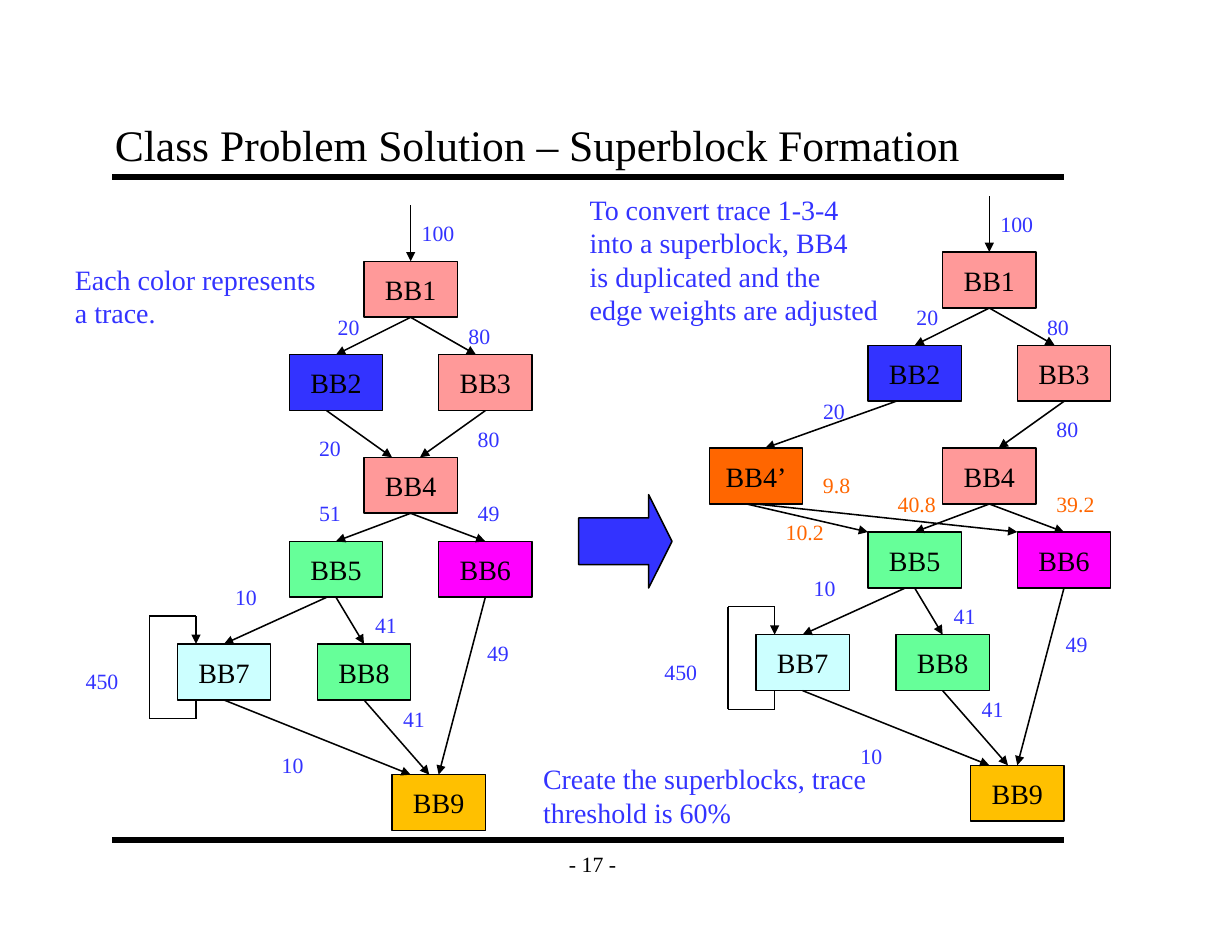
from typing import NamedTuple

from lxml.etree import SubElement
from pptx import Presentation
from pptx.dml.color import RGBColor
from pptx.enum.shapes import MSO_CONNECTOR, MSO_SHAPE
from pptx.enum.text import MSO_ANCHOR, PP_ALIGN
from pptx.oxml.ns import qn
from pptx.util import Cm, Pt

FONT = "Times New Roman"
BLACK, BLUE, ORANGE = "000000", "3333FF", "FF6600"
PINK, GREEN, MAGENTA, CYAN, GOLD = "FF9999", "66FF99", "FF00FF", "CCFFFF", "FFC000"
BOX_WIDTH, BOX_HEIGHT = 10, 6


class Block(NamedTuple):
    name: str
    left: float
    top: float
    fill: str


class Edge(NamedTuple):
    x1: float
    y1: float
    x2: float
    y2: float
    arrow: bool = True


class Weight(NamedTuple):
    value: str
    left: float
    top: float
    color: str = BLUE


class Note(NamedTuple):
    lines: list[str]
    left: float
    top: float
    width: float
    height: float


# Positions are in grid steps of a twelfth of an inch.
# Parts shared by both flow graphs, placed for the left one
BLOCKS = [
    Block("BB1", 39, 28, PINK), Block("BB2", 31, 38, BLUE), Block("BB3", 47, 38, PINK),
    Block("BB4", 39, 49, PINK), Block("BB5", 31, 58, GREEN), Block("BB6", 47, 58, MAGENTA),
    Block("BB7", 19, 69, CYAN), Block("BB8", 34, 69, GREEN), Block("BB9", 42, 83, GOLD),
]
EDGES = [
    Edge(44, 22, 44, 28), Edge(44, 34, 36, 38), Edge(44, 34, 51, 38),
    Edge(52, 44, 45, 49), Edge(44, 55, 36, 58), Edge(44, 55, 52, 58),
    Edge(35, 64, 24, 69), Edge(36, 64, 39, 69), Edge(24, 75, 44, 83),
    Edge(39, 75, 46, 83), Edge(52, 64, 47, 83),
    # Loop around BB7
    Edge(21, 75, 21, 77, False), Edge(21, 77, 16, 77, False), Edge(16, 77, 16, 66, False),
    Edge(16, 66, 21, 66, False), Edge(21, 66, 21, 69),
]
WEIGHTS = [
    Weight("100", 44, 23), Weight("450", 8, 71), Weight("20", 35, 33), Weight("80", 49, 34),
    Weight("80", 50, 45), Weight("49", 51, 68), Weight("10", 29, 80), Weight("41", 39, 65),
    Weight("10", 24, 62), Weight("41", 42, 75),
]

# Parts of one graph only
BEFORE_EDGES = [Edge(35, 44, 42, 49)]
BEFORE_WEIGHTS = [Weight("20", 33, 46), Weight("51", 33, 53), Weight("49", 50, 53)]
AFTER_BLOCKS = [Block("BB4’", 76, 48, ORANGE)]
AFTER_EDGES = [Edge(96, 43, 82, 48), Edge(81, 54, 109, 57), Edge(80, 54, 93, 57)]
AFTER_WEIGHTS = [
    Weight("20", 87, 42), Weight("40.8", 95, 52, ORANGE), Weight("39.2", 112, 52, ORANGE),
    Weight("10.2", 83, 55, ORANGE), Weight("9.8", 87, 50, ORANGE),
]
AFTER_SHIFT = (62, -1)

NOTES = [
    Note(["Each color represents", "a trace."], 6.84, 27.5, 28.2, 8.4),
    Note(["To convert trace 1-3-4", "into a superblock, BB4", "is duplicated and the",
          "edge weights are adjusted"], 62, 20, 33.4, 15.6),
    Note(["Create the superblocks, trace", "threshold is 60%"], 57, 81, 37.1, 8.4),
]


def grid(steps: float) -> Cm:
    return Cm(steps * 2.54 / 12)


def rgb(color: str) -> RGBColor:
    return RGBColor.from_string(color)


def write(shape, lines: list[str], size: int, color: str = BLACK,
          align=PP_ALIGN.LEFT, **frame_format) -> None:
    frame = shape.text_frame
    for name, value in ({"word_wrap": False} | frame_format).items():
        setattr(frame, name, value)
    for index, line in enumerate(lines):
        paragraph = frame.add_paragraph() if index else frame.paragraphs[0]
        paragraph.alignment = align
        run = paragraph.add_run()
        run.text = line
        for name, value in {"name": FONT, "size": Pt(size)}.items():
            setattr(run.font, name, value)
        run.font.color.rgb = rgb(color)


def add_text(slide, left: float, top: float, width: float, height: float,
             lines: list[str], size: int, color: str = BLACK, **options) -> None:
    shape = slide.shapes.add_textbox(grid(left), grid(top), grid(width), grid(height))
    write(shape, lines, size, color, **options)


def add_filled(slide, kind, left: float, top: float, width: float, height: float, fill: str):
    shape = slide.shapes.add_shape(kind, grid(left), grid(top), grid(width), grid(height))
    shape.shadow.inherit = False
    shape.fill.solid()
    shape.fill.fore_color.rgb = rgb(fill)
    shape.line.color.rgb = rgb(BLACK)
    shape.line.width = Pt(1)
    return shape


def add_edge(slide, edge: Edge, width: float = 1) -> None:
    connector = slide.shapes.add_connector(
        MSO_CONNECTOR.STRAIGHT, grid(edge.x1), grid(edge.y1), grid(edge.x2), grid(edge.y2))
    connector.line.color.rgb = rgb(BLACK)
    connector.line.width = Pt(width)
    if edge.arrow:
        SubElement(connector.line._get_or_add_ln(), qn("a:tailEnd"), type="triangle")
    SubElement(connector._element.spPr, qn("a:effectLst"))


def add_block(slide, block: Block) -> None:
    shape = add_filled(slide, MSO_SHAPE.RECTANGLE, block.left, block.top,
                       BOX_WIDTH, BOX_HEIGHT, block.fill)
    write(shape, [block.name], 18, align=PP_ALIGN.CENTER, vertical_anchor=MSO_ANCHOR.MIDDLE)


def add_weight(slide, weight: Weight) -> None:
    dots = weight.value.count(".")
    width = 2.4 + 1.17 * (len(weight.value) - dots) + 0.58 * dots
    add_text(slide, weight.left, weight.top, width, 4, [weight.value], 14, weight.color)


def add_graph(slide, blocks: list[Block], edges: list[Edge], weights: list[Weight],
              shift: tuple[int, int] = (0, 0)) -> None:
    dx, dy = shift
    for block in blocks:
        add_block(slide, block._replace(left=block.left + dx, top=block.top + dy))
    for edge in edges:
        add_edge(slide, Edge(edge.x1 + dx, edge.y1 + dy, edge.x2 + dx, edge.y2 + dy, edge.arrow))
    for weight in weights:
        add_weight(slide, weight._replace(left=weight.left + dx, top=weight.top + dy))


def main() -> None:
    presentation = Presentation()
    presentation.slide_width, presentation.slide_height = Cm(27.94), Cm(21.59)
    slide = presentation.slides.add_slide(presentation.slide_layouts[6])

    # Rules, page number and title
    for y in (19, 90):
        add_edge(slide, Edge(12, y, 114, y, False), 4)
    margins = {"margin_left": Cm(0.28), "margin_right": Cm(0.28),
               "margin_top": Cm(0.15), "margin_bottom": Cm(0.15)}
    add_text(slide, 59, 90, 9, 5, ["- 17 -"], 14, align=PP_ALIGN.CENTER,
             vertical_anchor=MSO_ANCHOR.MIDDLE, **margins)
    add_text(slide, 11, 11, 102, 8, ["Class Problem Solution – Superblock Formation"], 28,
             vertical_anchor=MSO_ANCHOR.BOTTOM, **(margins | {"word_wrap": True}))

    # Graph after superblock formation, on the right
    add_graph(slide, BLOCKS, EDGES, WEIGHTS, AFTER_SHIFT)
    add_graph(slide, AFTER_BLOCKS, AFTER_EDGES, AFTER_WEIGHTS)

    # Graph before superblock formation, on the left
    add_graph(slide, BLOCKS, EDGES + BEFORE_EDGES, WEIGHTS + BEFORE_WEIGHTS)

    # Arrow between the graphs
    arrow = add_filled(slide, MSO_SHAPE.RIGHT_ARROW, 62, 53, 10, 10, BLUE)
    arrow.adjustments[0], arrow.adjustments[1] = 0.5, 0.25

    # Notes
    for note in NOTES:
        add_text(slide, note.left, note.top, note.width, note.height, note.lines, 18, BLUE)

    presentation.save("out.pptx")


if __name__ == "__main__":
    main()
